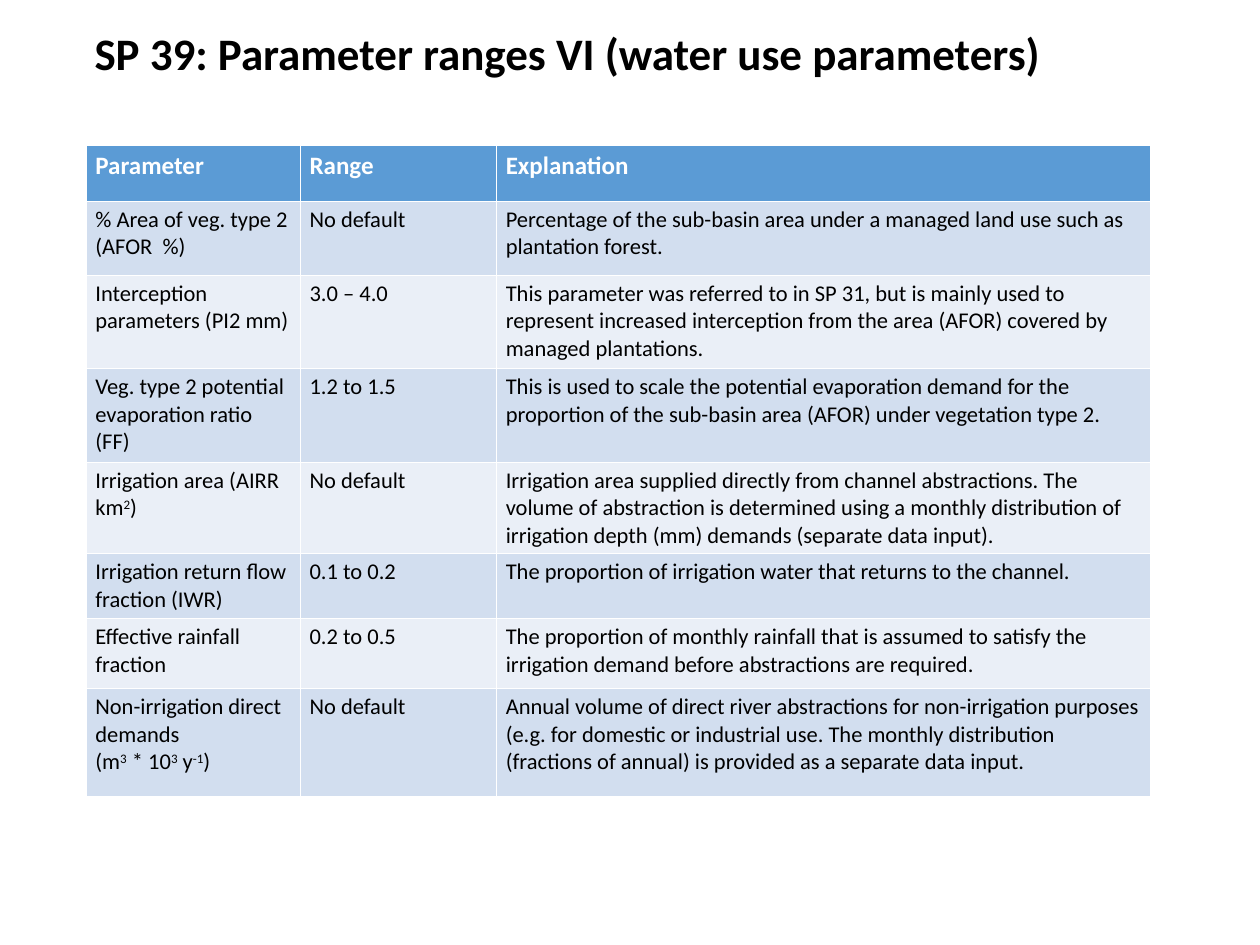
"""Build the slide of water use parameter ranges."""
from pptx import Presentation
from pptx import util as u
from pptx.dml import color
from pptx.enum import text

HEADER = ["Parameter", "Range", "Explanation"]
PARAMETERS = [
    ["% Area of veg. type 2 (AFOR  %)", "No default",
     "Percentage of the sub-basin area under a managed land use such as plantation forest."],
    ["Interception parameters (PI2 mm)", "3.0 – 4.0",
     "This parameter was referred to in SP 31, but is mainly used to represent increased "
     "interception from the area (AFOR) covered by managed plantations."],
    ["Veg. type 2 potential evaporation ratio (FF)", "1.2 to 1.5",
     "This is used to scale the potential evaporation demand for the proportion of the "
     "sub-basin area (AFOR) under vegetation type 2."],
    ["Irrigation area (AIRR km^2^)", "No default",
     "Irrigation area supplied directly from channel abstractions. The volume of abstraction "
     "is determined using a monthly distribution of irrigation depth (mm) demands "
     "(separate data input)."],
    ["Irrigation return flow fraction (IWR)", "0.1 to 0.2",
     "The proportion of irrigation water that returns to the channel."],
    ["Effective rainfall fraction", "0.2 to 0.5",
     "The proportion of monthly rainfall that is assumed to satisfy the irrigation demand "
     "before abstractions are required."],
    ["Non-irrigation direct demands\n(m^3^ * 10^3^ y^-1^)", "No default",
     "Annual volume of direct river abstractions for non-irrigation purposes (e.g. for domestic "
     "or industrial use. The monthly distribution (fractions of annual) is provided as a "
     "separate data input."],
]
COLUMN_WIDTHS = [2.38, 2.18, 7.26]
ROW_HEIGHTS = [0.62, 0.82, 1.04, 1.04, 1.01, 0.72, 0.78, 1.2]
TITLE_FORMAT = {"size": 36, "bold": True, "color": "000000"}
HEADER_FORMAT = {"size": 20, "bold": True, "color": "FFFFFF"}
BODY_FORMAT = {"size": 18, "bold": False, "color": "000000"}


def rgb(value):
    """Turn a hex string into a colour."""
    return color.RGBColor.from_string(value)


def write(frame, content, look):
    """Write lines of text, raising what stands between carets."""
    for number, line in enumerate(content.split("\n")):
        para = frame.add_paragraph() if number else frame.paragraphs[0]
        for order, piece in enumerate(line.split("^")):
            if not piece:
                continue
            span = para.add_run()
            span.text = piece
            values = {"name": "Calibri", "size": u.Pt(look["size"]), "bold": look["bold"]}
            for name, value in values.items():
                setattr(span.font, name, value)
            span.font.color.rgb = rgb(look["color"])
            if order % 2:
                span._r.get_or_add_rPr().set("baseline", "30000")


deck = Presentation()
deck.slide_width, deck.slide_height = u.Inches(14), u.Inches(10.5)
page = deck.slides.add_slide(deck.slide_layouts[5])

title = page.shapes.title
place = {"left": 0.95, "top": 0.26, "width": 12.07, "height": 0.72}
for name, value in place.items():
    setattr(title, name, u.Inches(value))
title.text_frame.vertical_anchor = text.MSO_ANCHOR.MIDDLE
write(title.text_frame, "SP 39: Parameter ranges VI (water use parameters)", TITLE_FORMAT)
heading = title.text_frame.paragraphs[0]
heading.alignment = text.PP_ALIGN.LEFT
heading.line_spacing = 0.9

table = page.shapes.add_table(
    len(ROW_HEIGHTS), len(COLUMN_WIDTHS), u.Inches(0.96), u.Inches(1.62),
    u.Inches(sum(COLUMN_WIDTHS)), u.Inches(sum(ROW_HEIGHTS))).table
for column, width in zip(table.columns, COLUMN_WIDTHS):
    column.width = u.Inches(width)
for row, height in zip(table.rows, ROW_HEIGHTS):
    row.height = u.Inches(height)

for number, entries in enumerate([HEADER] + PARAMETERS):
    band = "D2DEEF" if number % 2 else "EAEFF7"
    fill, look = (band, BODY_FORMAT) if number else ("5B9BD5", HEADER_FORMAT)
    for cell, content in zip(table.rows[number].cells, entries):
        cell.fill.solid()
        cell.fill.fore_color.rgb = rgb(fill)
        write(cell.text_frame, content, look)

deck.save("out.pptx")
